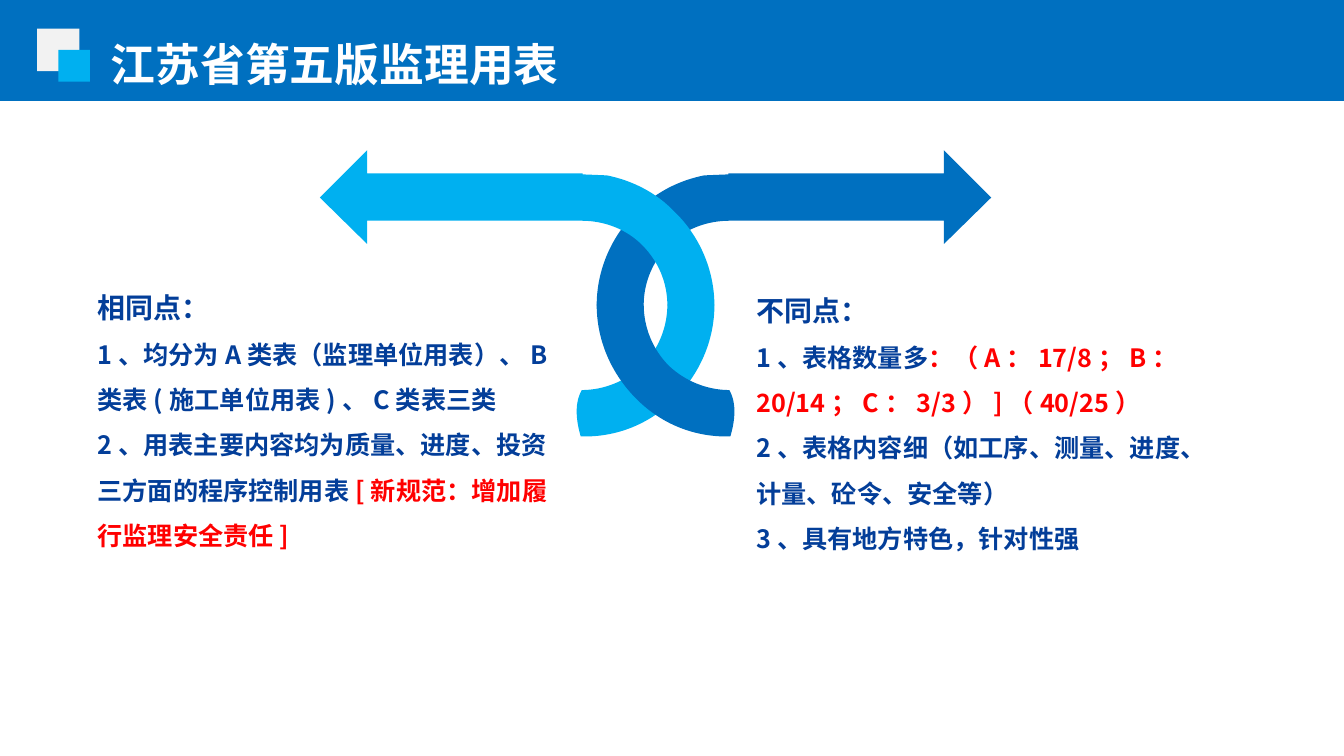
from dataclasses import dataclass

from lxml import etree
from pptx import Presentation, util as u
from pptx.dml.color import RGBColor
from pptx.enum import lang, shapes, text
from pptx.oxml import ns

WIDTH, HEIGHT = u.Inches(13.34), u.Inches(7.5)
FONT = "Noto Sans CJK SC"
COLORS = {"blue": "0070C0", "sky": "00B0F0", "pale": "F2F2F2",
          "navy": "033E99", "red": "FF0000", "white": "FFFFFF"}
MIRROR = 97.56


@dataclass
class Box:
    """A rectangle in percent of the slide's width and height."""
    left: float
    top: float
    width: float
    height: float


@dataclass
class Block:
    """A filled rectangle."""
    box: Box
    color: str


@dataclass
class Ribbon:
    """An outline of lines (x, y) and cubic curves (six values), in percent."""
    steps: list[tuple[float, ...]]
    color: str
    mirrored: bool


@dataclass
class Column:
    """A heading with body paragraphs, each a list of (text, color) runs."""
    box: Box
    heading: str
    body: list[list[tuple[str, str]]]


BLOCKS = [
    Block(Box(0, -0.13, 100, 13.5), "blue"),
    Block(Box(2.77, 3.8, 3.13, 5.6), "pale"),
    Block(Box(4.35, 6.6, 2.35, 4.2), "sky"),
]

ARROW = [
    (70.24, 19.87), (73.76, 26.13), (70.24, 32.27), (70.24, 29.2), (54.27, 29.2),
    (52.62, 29.2, 50.97, 30.27, 49.78, 32.4),
    (48.58, 34.53, 47.9, 37.33, 47.9, 40.4),
    (44.4, 40.4),
    (44.4, 35.73, 45.5, 31.2, 47.38, 28),
    (48.73, 25.47, 50.52, 23.87, 52.4, 23.2),
    (54.2, 23.07), (54.2, 22.93), (70.24, 22.93),
]
TAIL = [
    (44.4, 40.3),
    (44.4, 45.07, 45.5, 49.47, 47.38, 52.8),
    (49.25, 56.13, 51.72, 57.87, 54.35, 57.73),
    (54.65, 55.87, 54.87, 53.47, 54.27, 51.6),
    (52.62, 51.6, 50.97, 50.4, 49.78, 48.4),
    (48.58, 46.27, 47.9, 43.33, 47.9, 40.3),
]
RIBBONS = [
    Ribbon(ARROW, "blue", False),
    Ribbon(ARROW, "sky", True),
    Ribbon(TAIL, "sky", True),
    Ribbon(TAIL, "blue", False),
]

COLUMNS = [
    Column(Box(55.3, 35.75, 35.98, 40.53), "不同点：", [
        [("1、表格数量多", "navy"),
         ("：（A：17/8；B：20/14；C：3/3）]（40/25）", "red")],
        [("2、表格内容细（如工序、测量、进度、计量、砼令、安全等）", "navy")],
        [("3、具有地方特色，针对性强", "navy")],
    ]),
    Column(Box(6.28, 35.38, 36.58, 38.67), "相同点：", [
        [("1、均分为A类表（监理单位用表）、B类表(施工单位用表)、C类表三类", "navy")],
        [("2、用表主要内容均为质量、进度、投资三方面的程序控制用表", "navy"),
         ("[新规范：增加履行监理安全责任]", "red")],
    ]),
]


def x_at(percent: float) -> int:
    """Return a horizontal length."""
    return round(WIDTH * percent / 100)


def y_at(percent: float) -> int:
    """Return a vertical length."""
    return round(HEIGHT * percent / 100)


def place(box: Box) -> tuple[int, int, int, int]:
    """Return left, top, width and height of a box."""
    return x_at(box.left), y_at(box.top), x_at(box.width), y_at(box.height)


def paint(sp, color: str) -> None:
    """Give a shape a flat fill without line or shadow."""
    sp.fill.solid()
    sp.fill.fore_color.rgb = RGBColor.from_string(COLORS[color])
    sp.line.fill.background()
    sp.shadow.inherit = False


def add_block(s, block: Block) -> None:
    """Draw a filled rectangle."""
    sp = s.shapes.add_shape(shapes.MSO_SHAPE.RECTANGLE, *place(block.box))
    paint(sp, block.color)


def bend(sp, steps: list[tuple[float, ...]]) -> None:
    """Join the three segments of each six-value step into one cubic curve."""
    segments = iter(list(sp._element.iter(ns.qn("a:lnTo"))))
    for step in steps[1:]:
        group = [next(segments) for _ in range(len(step) // 2)]
        if len(group) == 3:
            curve = etree.Element(ns.qn("a:cubicBezTo"))
            group[0].addprevious(curve)
            for segment in group:
                curve.append(segment[0])
                segment.getparent().remove(segment)


def add_ribbon(s, ribbon: Ribbon) -> None:
    """Draw a ribbon, mirrored if asked."""
    points = [(x_at(MIRROR - x if ribbon.mirrored else x), y_at(y))
              for step in ribbon.steps for x, y in zip(step[::2], step[1::2])]
    builder = s.shapes.build_freeform(*points[0])
    builder.add_line_segments(points[1:], close=True)
    sp = builder.convert_to_shape()
    bend(sp, ribbon.steps)
    paint(sp, ribbon.color)


def add_frame(s, box: Box, pad_x: float = 0.1, pad_y: float = 0.05):
    """Add a wrapping text box and return its text frame."""
    tf = s.shapes.add_textbox(*place(box)).text_frame
    tf.word_wrap = True
    tf.vertical_anchor = text.MSO_ANCHOR.TOP
    tf.margin_left = tf.margin_right = u.Inches(pad_x)
    tf.margin_top = tf.margin_bottom = u.Inches(pad_y)
    return tf


def add_run(p, words: str, *, size: int, color: str, bold: bool = True) -> None:
    """Add formatted text to a paragraph."""
    r = p.add_run()
    r.text = words
    r.font.name = FONT
    r.font.size = u.Pt(size)
    r.font.bold = bold
    r.font.language_id = lang.MSO_LANGUAGE_ID.SIMPLIFIED_CHINESE
    r.font.color.rgb = RGBColor.from_string(COLORS[color])
    etree.SubElement(r._r.get_or_add_rPr(), ns.qn("a:ea"), typeface=FONT)


def add_column(s, column: Column) -> None:
    """Draw a heading and its paragraphs."""
    tf = add_frame(s, column.box, pad_x=0.13, pad_y=0.06)
    p = tf.paragraphs[0]
    p.line_spacing = 1.5
    add_run(p, column.heading, size=20, color="navy")
    for runs in column.body:
        p = tf.add_paragraph()
        p.line_spacing = 1.5
        for words, color in runs:
            add_run(p, words, size=18, color=color)


def main() -> None:
    """Build the slide and save it."""
    prs = Presentation()
    prs.slide_width, prs.slide_height = WIDTH, HEIGHT
    s = prs.slides.add_slide(prs.slide_layouts[6])
    for block in BLOCKS:
        add_block(s, block)
    title = add_frame(s, Box(7.5, 4.2, 58.17, 8.53))
    add_run(title.paragraphs[0], "江苏省第五版监理用表", size=32, color="white")
    for ribbon in RIBBONS:
        add_ribbon(s, ribbon)
    for column in COLUMNS:
        add_column(s, column)
    prs.save("out.pptx")


if __name__ == "__main__":
    main()
